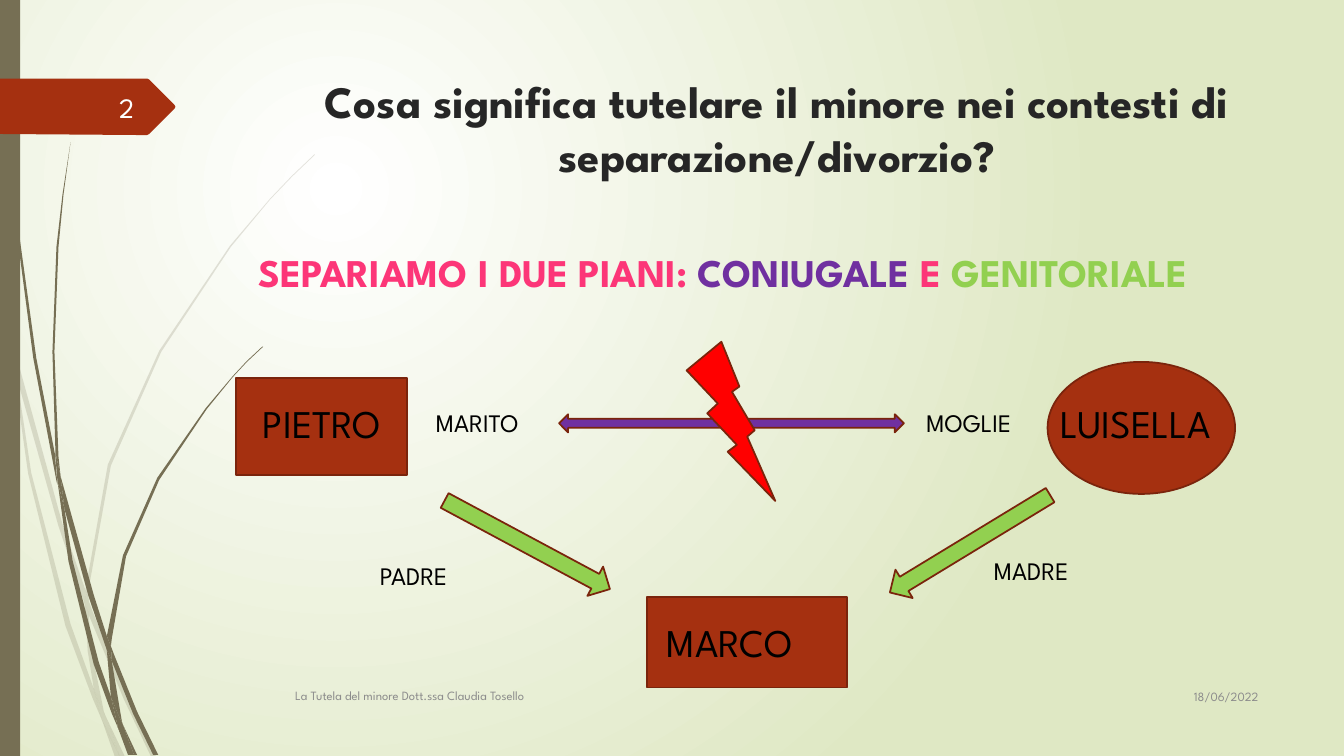
from pptx import Presentation
from pptx.dml.color import RGBColor
from pptx.enum.shapes import MSO_SHAPE
from pptx.enum.text import MSO_ANCHOR, PP_ALIGN
from pptx.oxml import parse_xml
from pptx.oxml.ns import nsdecls, qn
from pptx.util import Inches, Pt

BROWN, RUST, RUST_EDGE = "766F54", "A53010", "7A240C"
PINK, PURPLE, GREEN, RED = "FC3678", "7030A0", "92D050", "FF0000"
BLACK, GREY, INK, WHITE = "000000", "8C8C8C", "262626", "FEFFFF"

# Outlines of the grass blades, in grid columns and rows
FAINT_BLADES = [
    [(1.1, 35), (0.9, 32.2), (0, 28.2), (0, 29.9), (1, 34.4)],
    [(5.8, 52.2), (8.4, 59.9), (8.5, 58.6), (6.2, 52), (1.4, 34.5), (1.7, 37.6)],
    [(9.2, 60.7), (8.8, 59.6), (8.8, 61), (12.3, 69.4), (15, 75.1), (15.5, 75.1),
     (12.7, 69.2)],
    [(11.9, 75.1), (12.4, 75.1), (10.5, 71.1)],
    [(9.3, 68.3), (7, 61.9), (3.1, 46.9), (1.7, 37.6), (1.1, 35), (2.8, 47),
     (6.5, 62.1), (9.2, 69.3), (10.1, 71.4), (9.9, 70.7)],
    [(8.4, 59.9), (8.7, 64.6), (9.3, 68.3), (9.6, 69.2), (10.5, 71.1), (10.3, 70.6),
     (9.1, 64.6), (8.8, 61), (8.8, 60.8)],
    [(8.8, 58.4), (11, 46.2), (16, 34.9), (22.9, 24.5), (26.8, 19.8), (29, 17.5),
     (31.2, 15.4), (31.2, 15.3), (28.9, 17.5), (26.8, 19.7), (22.8, 24.4),
     (15.8, 34.8), (10.7, 46.1), (8.5, 58.4), (8.5, 58.6), (8.8, 59.6)],
    [(10.1, 71.4), (11.4, 75.1), (11.9, 75.1)],
    [(8.8, 60.8), (8.8, 61), (8.8, 59.6), (8.5, 58.6), (8.4, 59.9)],
    [(9.6, 69.2), (9.3, 68.3), (9.9, 70.7), (10.1, 71.4), (11.9, 75.1), (10.5, 71.1)],
]
DARK_BLADES = [
    [(0.7, 11), (1.7, 23.3), (3.3, 35.5), (5.6, 47.7), (5.7, 48.1), (5.5, 45.7),
     (5.5, 45.3), (3.6, 35.5), (1.9, 23.2), (0.8, 10.9), (0.5, 4.8), (0.4, 0),
     (0.3, 0), (0.4, 4.8)],
    [(8.8, 59.2), (10.6, 64.5), (10.6, 63.1), (9.3, 59), (6, 47.2), (6.4, 50.5)],
    [(11.3, 64.9), (11, 64.1), (11.1, 65.6), (13.2, 70.8), (15.2, 74.9),
     (15.7, 74.9), (13.6, 70.6)],
    [(11, 69.1), (9.8, 65.7), (7.2, 55.6), (6.4, 50.5), (5.7, 47.7), (6.8, 55.7),
     (9.3, 65.9), (11.1, 70.8), (11.7, 72.2), (11.6, 71.7)],
    [(6, 47.2), (5.8, 45.3), (5.4, 34.9), (5.8, 24.5), (6.3, 19.3), (7, 14.1),
     (6.2, 19.3), (5.6, 24.5), (5.2, 34.9), (5.5, 44.9)],
    [(13.3, 74.9), (13.6, 74.9), (12.2, 71.9)],
    [(5.7, 47.7), (6.4, 50.5), (6, 47.2), (5.5, 44.9), (5.5, 45.3)],
    [(11.1, 63.3), (12.5, 55.2), (15.8, 47.6), (20.5, 40.6), (23.1, 37.4),
     (24.5, 35.9), (26.1, 34.4), (26, 34.4), (24.5, 35.8), (23.1, 37.3),
     (20.4, 40.5), (15.6, 47.4), (12.2, 55.1), (10.6, 63.1), (11, 64.1)],
    [(11.7, 72.2), (12.7, 74.9), (13.1, 74.9)],
    [(10.6, 64.5), (11, 69.1), (11.6, 70.6), (12.2, 71.9), (12.1, 71.6),
     (11.1, 65.6), (10.9, 65.1)],
    [(10.6, 64.5), (10.9, 65.1), (11.1, 65.6), (11, 64.1), (10.6, 63.1)],
    [(11.6, 70.6), (11, 69.1), (11.6, 71.7), (11.7, 72.2), (13, 74.9), (13.3, 74.9),
     (12.2, 71.9)],
]
PAGE_FLAG = [(17.3, 10.8), (14.8, 13.3), (14.6, 13.4), (13.6, 13.4), (0, 13.3), (0, 7.8),
             (13.6, 7.8), (14.6, 7.8), (14.8, 7.9), (17.3, 10.4), (17.4, 10.6)]


def color(code):
    return RGBColor.from_string(code)


class SlideBuilder:
    """Places elements on a grid of tenth-inch columns and rows."""
    cell = Inches(0.1)
    font = "League Spartan"
    line_width = Pt(1.25)

    def __init__(self, slide):
        self.slide = slide

    def grid(self, *lengths):
        return [round(length * self.cell) for length in lengths]

    def background(self, inner, outer):
        self.slide.background.fill.solid()
        solid = self.slide.background.fill._xPr.find(qn("a:solidFill"))
        solid.getparent().replace(solid, parse_xml(
            f'<a:gradFill {nsdecls("a")} rotWithShape="1"><a:gsLst>'
            f'<a:gs pos="0"><a:srgbClr val="{inner}"/></a:gs>'
            f'<a:gs pos="100000"><a:srgbClr val="{outer}"/></a:gs></a:gsLst>'
            '<a:path path="circle"><a:fillToRect l="50000" t="50000" '
            'r="100000" b="100000"/></a:path></a:gradFill>'))

    def paint(self, shape, fill, line=None, opacity=None):
        shape.shadow.inherit = False
        shape.fill.solid()
        shape.fill.fore_color.rgb = color(fill)
        if opacity:
            swatch = shape.fill._xPr.find(".//" + qn("a:srgbClr"))
            swatch.append(parse_xml(
                f'<a:alpha {nsdecls("a")} val="{opacity * 1000}"/>'))
        if line:
            shape.line.color.rgb = color(line)
            shape.line.width = self.line_width
        else:
            shape.line.fill.background()

    def shape(self, kind, place, fill, line=RUST_EDGE, rotation=0):
        shape = self.slide.shapes.add_shape(kind, *self.grid(*place))
        shape.rotation = rotation
        self.paint(shape, fill, line)

    def outline(self, points, fill, opacity=None):
        start, *rest = [self.grid(*point) for point in points]
        builder = self.slide.shapes.build_freeform(*start)
        builder.add_line_segments(rest, close=True)
        self.paint(builder.convert_to_shape(), fill, opacity=opacity)

    def text(self, runs, place, size=18, ink=BLACK, bold=False,
             align=PP_ALIGN.LEFT, anchor=MSO_ANCHOR.TOP, before=0):
        """Runs are one string, or pairs of string and colour."""
        frame = self.slide.shapes.add_textbox(*self.grid(*place)).text_frame
        frame.word_wrap = True
        frame.vertical_anchor = anchor
        paragraph = frame.paragraphs[0]
        paragraph.alignment = align
        paragraph.space_before = Pt(before)
        for words, tint in [(runs, ink)] if isinstance(runs, str) else runs:
            run = paragraph.add_run()
            run.text = words
            run.font.name = self.font
            run.font.size = Pt(size)
            run.font.bold = bold
            run.font.color.rgb = color(tint)


def main():
    presentation = Presentation()
    presentation.slide_width, presentation.slide_height = Inches(13.33), Inches(7.5)
    page = SlideBuilder(presentation.slides.add_slide(presentation.slide_layouts[6]))

    # Background, grass blades, side bar and page-number flag
    page.background("FFFFFF", "DFE8C4")
    for blades, opacity in [(FAINT_BLADES, 20), (DARK_BLADES, None)]:
        for blade in blades:
            page.outline(blade, BROWN, opacity)
    page.shape(MSO_SHAPE.RECTANGLE, (0, 0, 2, 75), BROWN, line=None)
    page.outline(PAGE_FLAG, RUST)

    # Family members
    for name, kind, place, label in [
            ("MARCO", MSO_SHAPE.RECTANGLE, (64.2, 59.2, 19.8, 9), (65.15, 60.85, 17.6, 5.7)),
            ("PIETRO", MSO_SHAPE.RECTANGLE, (23.4, 37.5, 17, 9.6), (25.1, 39.1, 15.3, 5.7)),
            ("LUISELLA", MSO_SHAPE.OVAL, (103.9, 35.9, 18.6, 13.1),
             (104.2, 39.1, 18.6, 5.7))]:
        page.shape(kind, place, RUST)
        page.text(name, label, size=28)

    # Roles
    for role, left, top, width in [("MARITO", 42.25, 39.95, 14.1), ("PADRE", 36.7, 55.05, 15.8),
                                   ("MOGLIE", 90.9, 39.9, 12.6),
                                   ("MADRE", 97.6, 54.6, 18.6)]:
        page.text(role, (left, top, width, 4))

    # Parental arrows, marital arrow and its break
    for left, top, angle in [(43, 52.4, 28.2), (86.9, 52.3, 148.7)]:
        page.shape(MSO_SHAPE.RIGHT_ARROW, (left, top, 18.6, 3.3), GREEN, rotation=angle)
    page.shape(MSO_SHAPE.LEFT_RIGHT_ARROW, (55.45, 41.1, 34.2, 1.8), PURPLE)
    page.shape(MSO_SHAPE.LIGHTNING_BOLT, (68.1, 33.9, 8.8, 15.8), RED)

    # Title and key message
    page.text("Cosa significa tutelare il minore nei contesti di separazione/divorzio?",
              (28.35, 6.8, 97.5, 14), size=32, ink=INK, bold=True, align=PP_ALIGN.CENTER)
    page.text([("SEPARIAMO I DUE PIANI: ", PINK), ("CONIUGALE", PURPLE),
               (" E ", PINK), ("GENITORIALE ", GREEN)],
              (18.75, 24.1, 107, 38.8), size=28, bold=True,
              align=PP_ALIGN.CENTER, before=10)

    # Footer and page number
    page.text("La Tutela del minore Dott.ssa Claudia Tosello", (28.3, 67, 83.3, 4),
              size=9, ink=GREY, anchor=MSO_ANCHOR.MIDDLE)
    page.text("18/06/2022", (113.3, 67, 12.5, 4.1), size=9, ink=GREY,
              align=PP_ALIGN.RIGHT, anchor=MSO_ANCHOR.MIDDLE)
    page.text("2", (5.8, 8.6, 8.5, 4), size=20, ink=WHITE,
              align=PP_ALIGN.RIGHT, anchor=MSO_ANCHOR.MIDDLE)

    presentation.save("out.pptx")


if __name__ == "__main__":
    main()
